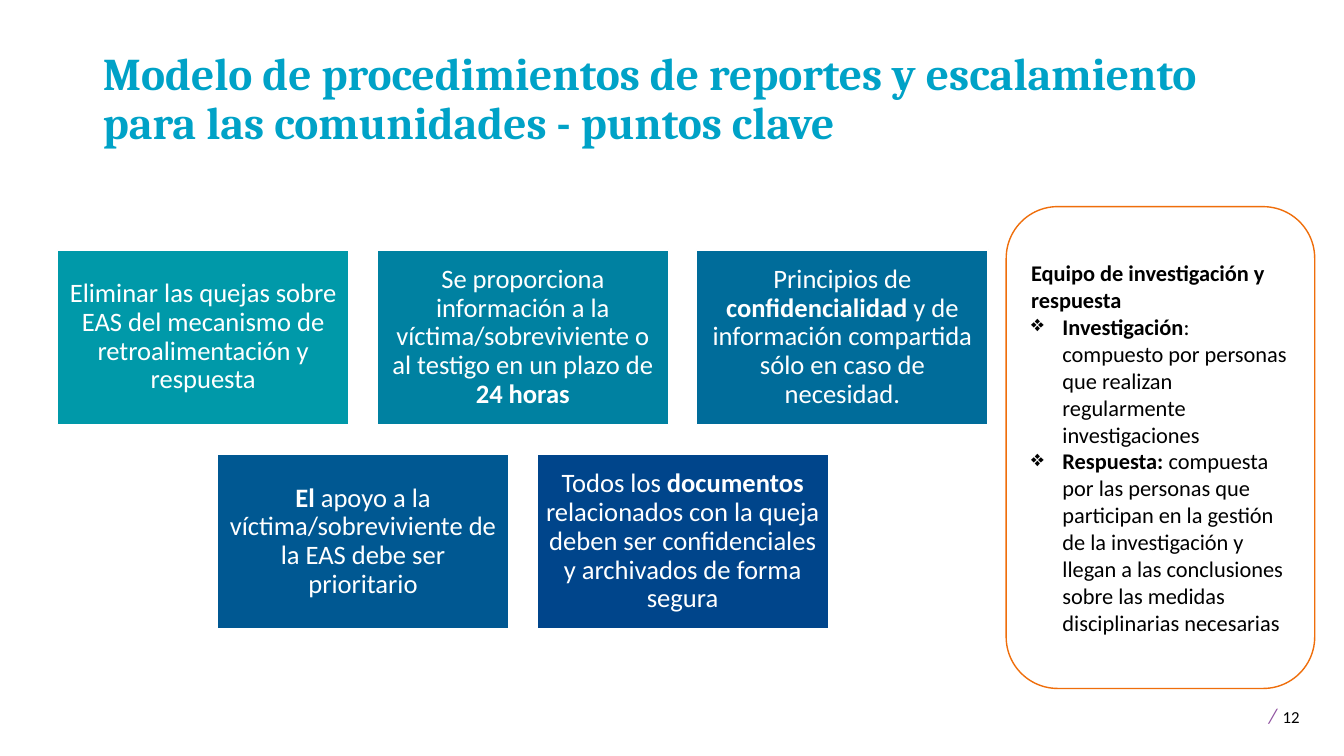
from dataclasses import dataclass

from lxml.etree import SubElement
from pptx import Presentation
from pptx.dml.color import RGBColor
from pptx.enum.shapes import MSO_SHAPE
from pptx.enum.text import MSO_ANCHOR, MSO_AUTO_SIZE, PP_ALIGN
from pptx.oxml.ns import qn
from pptx.shapes.autoshape import Shape
from pptx.slide import Slide
from pptx.text.text import TextFrame, _Paragraph
from pptx.util import Inches, Pt

LEFT, TOP = 0.57, 2.48
HALF_COLUMN, ROW = 1.585, 2.03
CARD_WIDTH, CARD_HEIGHT = 2.89, 1.73
BULLET_INDENT = 0.31


@dataclass(frozen=True)
class Piece:
    """A stretch of text with one style."""

    text: str
    bold: bool = False
    size: float = 0
    color: str = ""
    italic: bool = False


@dataclass(frozen=True)
class Card:
    """A key point placed in half columns and rows."""

    half_column: int
    row: int
    fill: str
    pieces: tuple[Piece, ...]


CARDS = (
    Card(0, 0, "0099A9", (
        Piece("Eliminar las quejas sobre EAS del mecanismo de retroalimentación y respuesta"),)),
    Card(2, 0, "0081A1", (
        Piece("Se proporciona información a la víctima/sobreviviente o al testigo en un plazo de "),
        Piece("24 horas", True))),
    Card(4, 0, "006C9A", (
        Piece("Principios de "), Piece("confidencialidad", True),
        Piece(" y de información compartida sólo en caso de necesidad."))),
    Card(1, 1, "005892", (
        Piece("El ", True),
        Piece("apoyo a la víctima/sobreviviente de la EAS debe ser prioritario"))),
    Card(3, 1, "00458B", (
        Piece("Todos los "), Piece("documentos", True),
        Piece(" relacionados con la queja deben ser confidenciales y archivados de forma segura"))),
)

TEAM_HEADING = (Piece("Equipo de investigación y respuesta", True),)
TEAM_ROLES = (
    (Piece("Investigación", True),
     Piece(": compuesto por personas que realizan regularmente investigaciones")),
    (Piece("Respuesta: ", True),
     Piece("compuesta por las personas que participan en la gestión de la investigación y "
           "llegan a las conclusiones sobre las medidas disciplinarias necesarias")),
)
PAGE_NUMBER = (Piece(" ", size=18), Piece("/", size=15, color="9053A1", italic=True),
               Piece(" ", size=18), Piece("12"))


def rgb(value: str) -> RGBColor:
    """Turn a hex string into a colour."""
    return RGBColor.from_string(value)


def write(paragraph: _Paragraph, pieces: tuple[Piece, ...], size: float, color: str,
          font: str = "Calibri") -> None:
    """Add styled pieces of text to a paragraph."""
    for piece in pieces:
        run = paragraph.add_run()
        run.text = piece.text
        run.font.name = font
        run.font.size = Pt(piece.size or size)
        run.font.bold = piece.bold
        run.font.italic = piece.italic
        run.font.color.rgb = rgb(piece.color or color)


def set_frame(frame: TextFrame, anchor: MSO_ANCHOR, side: float = 0.1, end: float = 0.05) -> None:
    """Set wrapping, anchor and margins of a text frame."""
    frame.word_wrap = True
    frame.auto_size = MSO_AUTO_SIZE.NONE
    frame.vertical_anchor = anchor
    frame.margin_left = frame.margin_right = Inches(side)
    frame.margin_top = frame.margin_bottom = Inches(end)


def add_box(slide: Slide, kind: MSO_SHAPE, left: float, top: float, width: float, height: float,
            fill: str, line: str) -> Shape:
    """Add a filled and outlined shape without shadow."""
    shape = slide.shapes.add_shape(kind, Inches(left), Inches(top), Inches(width), Inches(height))
    shape.shadow.inherit = False
    shape.fill.solid()
    shape.fill.fore_color.rgb = rgb(fill)
    shape.line.color.rgb = rgb(line)
    shape.line.width = Pt(1)
    return shape


def add_title(slide: Slide, text: str) -> None:
    """Place and format the title."""
    title = slide.shapes.title
    title.left, title.top = Inches(0.92), Inches(0.4)
    title.width, title.height = Inches(11.5), Inches(1.13)
    set_frame(title.text_frame, MSO_ANCHOR.BOTTOM)
    paragraph = title.text_frame.paragraphs[0]
    paragraph.alignment = PP_ALIGN.LEFT
    paragraph.line_spacing = 0.9
    write(paragraph, (Piece(text, True),), 32.4, "00A2C7", "Cambria")


def add_card(slide: Slide, card: Card) -> None:
    """Draw one key point."""
    shape = add_box(slide, MSO_SHAPE.RECTANGLE, LEFT + card.half_column * HALF_COLUMN,
                    TOP + card.row * ROW, CARD_WIDTH, CARD_HEIGHT, card.fill, "FFFFFF")
    set_frame(shape.text_frame, MSO_ANCHOR.MIDDLE, 0.08, 0.08)
    paragraph = shape.text_frame.paragraphs[0]
    paragraph.alignment = PP_ALIGN.CENTER
    paragraph.line_spacing = 0.9
    write(paragraph, card.pieces, 19, "FFFFFF")


def add_bullet(paragraph: _Paragraph) -> None:
    """Give a paragraph a hanging black diamond bullet."""
    properties = paragraph._p.get_or_add_pPr()
    properties.set("marL", str(Inches(BULLET_INDENT)))
    properties.set("indent", str(-Inches(BULLET_INDENT)))
    color = SubElement(properties, qn("a:buClr"))
    SubElement(color, qn("a:srgbClr"), val="000000")
    SubElement(properties, qn("a:buChar"), char="❖")


def add_team_panel(slide: Slide) -> None:
    """Draw the rounded panel that describes the team."""
    panel = add_box(slide, MSO_SHAPE.ROUNDED_RECTANGLE, 9.98, 2.05, 3.06, 4.78, "FFFFFF", "EF6E0B")
    panel.adjustments[0] = 0.167
    frame = panel.text_frame
    set_frame(frame, MSO_ANCHOR.MIDDLE)
    heading = frame.paragraphs[0]
    heading.alignment = PP_ALIGN.LEFT
    write(heading, TEAM_HEADING, 16, "000000")
    for role in TEAM_ROLES:
        paragraph = frame.add_paragraph()
        paragraph.alignment = PP_ALIGN.LEFT
        add_bullet(paragraph)
        write(paragraph, role, 16, "000000")


def add_page_number(slide: Slide) -> None:
    """Write the page number in the corner."""
    box = slide.shapes.add_textbox(Inches(12.43), Inches(6.88), Inches(0.87), Inches(0.4))
    set_frame(box.text_frame, MSO_ANCHOR.TOP)
    write(box.text_frame.paragraphs[0], PAGE_NUMBER, 12, "000000")


def main() -> None:
    """Build and save the presentation."""
    presentation = Presentation()
    presentation.slide_width, presentation.slide_height = Inches(13.33), Inches(7.5)
    slide = presentation.slides.add_slide(presentation.slide_layouts.get_by_name("Title Only"))
    add_page_number(slide)
    for card in CARDS:
        add_card(slide, card)
    add_title(slide, "Modelo de procedimientos de reportes y escalamiento "
                     "para las comunidades - puntos clave")
    add_team_panel(slide)
    presentation.save("out.pptx")


if __name__ == "__main__":
    main()
